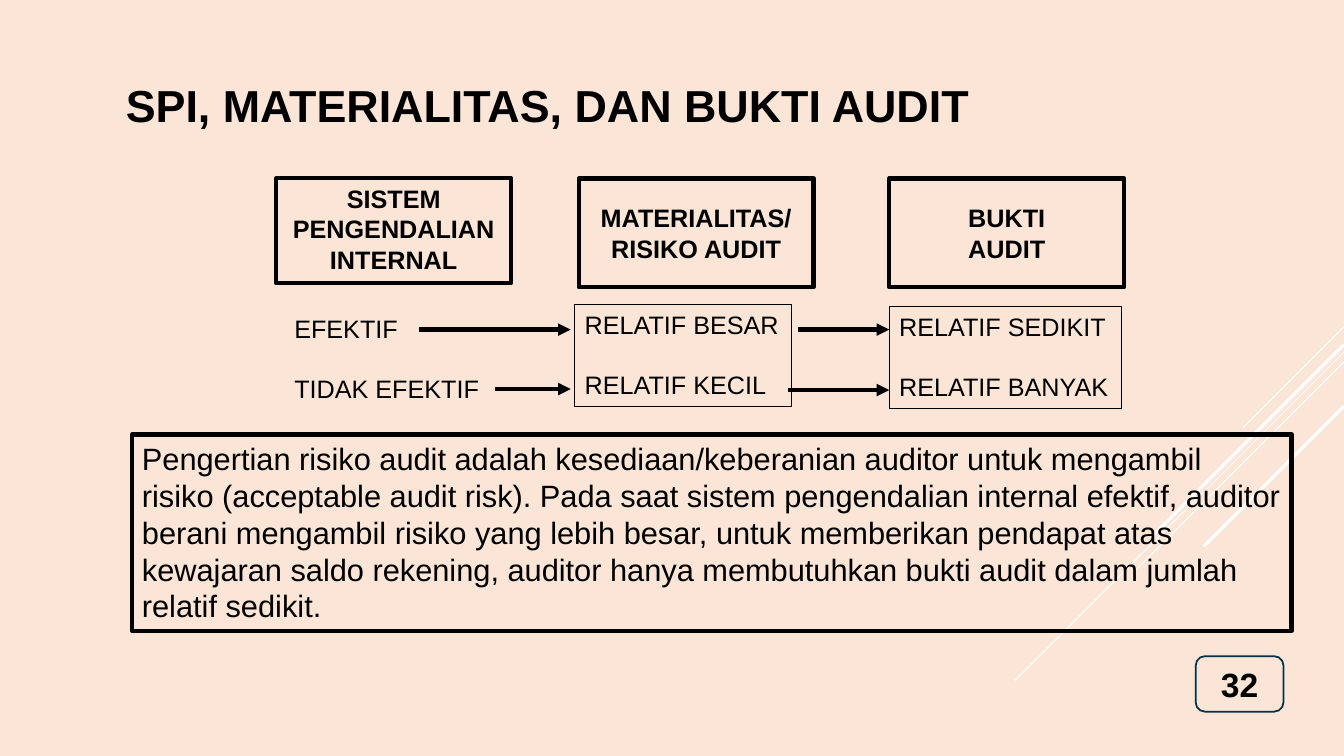
from lxml.etree import SubElement
from pptx import Presentation
from pptx.dml.color import RGBColor
from pptx.enum.shapes import MSO_CONNECTOR, MSO_SHAPE
from pptx.enum.text import MSO_ANCHOR, PP_ALIGN
from pptx.oxml.ns import qn
from pptx.util import Pt

PX = 9144
PEACH = RGBColor(0xFA, 0xE5, 0xD7)
BLACK = RGBColor(0, 0, 0)
WHITE = RGBColor(255, 255, 255)
NAVY = RGBColor(0x04, 0x31, 0x48)


def add_line(slide, start, end, color, weight, arrow=False):
    """Draw a straight line, with an arrowhead at its end if asked."""
    line = slide.shapes.add_connector(
        MSO_CONNECTOR.STRAIGHT, *(n * PX for n in (*start, *end)))
    line.line.color.rgb = color
    line.line.width = Pt(weight)
    properties = line._element.spPr
    if arrow:
        SubElement(line.line._get_or_add_ln(), qn("a:tailEnd"), type="triangle")
    SubElement(properties, qn("a:effectLst"))


def write(frame, paragraphs, size, bold=False, align=PP_ALIGN.LEFT,
          anchor=MSO_ANCHOR.TOP, wrap=True, gap=0):
    """Fill a text frame with evenly formatted paragraphs."""
    frame.word_wrap = wrap
    frame.vertical_anchor = anchor
    frame.text = "\n".join(paragraphs)
    for index, paragraph in enumerate(frame.paragraphs):
        paragraph.alignment = align
        paragraph.space_before = Pt(gap if index else 0)
        for run in paragraph.runs:
            run.font.name = "Arial"
            run.font.size = Pt(size)
            run.font.bold = bold
            run.font.color.rgb = BLACK


def add_box(slide, box, paragraphs, size, fill=None, border=BLACK, weight=3,
            preset=MSO_SHAPE.RECTANGLE, **style):
    """Add an outlined shape holding text."""
    shape = slide.shapes.add_shape(preset, *(n * PX for n in box))
    shape.shadow.inherit = False
    if fill is None:
        shape.fill.background()
    else:
        shape.fill.solid()
        shape.fill.fore_color.rgb = fill
    shape.line.color.rgb = border
    shape.line.width = Pt(weight)
    write(shape.text_frame, paragraphs, size, **style)


def add_label(slide, box, paragraphs, size, **style):
    """Add text without an outline."""
    label = slide.shapes.add_textbox(*(n * PX for n in box))
    write(label.text_frame, paragraphs, size, **style)


def add_rays(slide, right, top):
    """Draw the diagonal rays that run down-left from the slide's edge."""
    for drop, inset, length, weight in (
            (0, 0, 100, 0.75), (25, 0, 326, 0.75), (35, 0, 207, 0.75),
            (18, 0, 191, 2.25), (79, 0, 139, 2.25)):
        start = (right - inset, top + drop)
        end = (start[0] - length, start[1] + length)
        add_line(slide, start, end, WHITE, weight)


def add_headings(slide, top):
    """Add the three bold column headings."""
    middle = MSO_ANCHOR.MIDDLE
    for left, height, words, anchor, wrap in (
            (274, 104, ["SISTEM PENGENDALIAN INTERNAL"], MSO_ANCHOR.TOP, True),
            (574, 108, ["MATERIALITAS/", "RISIKO AUDIT"], middle, False),
            (882, 108, ["BUKTI", "AUDIT"], middle, False)):
        add_box(slide, (left, top, 233, height), words, 18, PEACH, bold=True,
                align=PP_ALIGN.CENTER, anchor=anchor, wrap=wrap)


def add_relations(slide, top):
    """Add the two rows of outcomes and the arrows that join them."""
    pair = {"wrap": False, "gap": 21.5}
    add_label(slide, (282, top + 4, 205, 101),
              ["EFEKTIF", "TIDAK EFEKTIF"], 18, **pair)
    add_box(slide, (570, top, 215, 101),
            ["RELATIF BESAR", "RELATIF KECIL"], 18, weight=0.75, **pair)
    add_box(slide, (882, top + 2, 230, 101),
            ["RELATIF SEDIKIT", "RELATIF BANYAK"], 18, weight=0.75, **pair)
    for start, end, drop in ((416, 566, 25), (491, 566, 84),
                             (791, 882, 25), (782, 882, 85)):
        add_line(slide, (start, top + drop), (end, top + drop), BLACK, 3, True)


def build():
    """Build and save the slide."""
    deck = Presentation()
    deck.slide_width, deck.slide_height = 1333 * PX, 750 * PX
    slide = deck.slides.add_slide(deck.slide_layouts[6])
    slide.background.fill.solid()
    slide.background.fill.fore_color.rgb = PEACH
    add_rays(slide, 1333, 324)
    add_box(slide, (1186, 651, 87, 55), ["32"], 24, PEACH, NAVY, 1.25,
            MSO_SHAPE.ROUNDED_RECTANGLE, bold=True, align=PP_ALIGN.CENTER,
            anchor=MSO_ANCHOR.MIDDLE)
    add_label(slide, (115, 68, 933, 71), ["SPI, MATERIALITAS, DAN BUKTI AUDIT"],
              32, bold=True, anchor=MSO_ANCHOR.MIDDLE)
    add_headings(slide, 177)
    add_relations(slide, 302)
    add_box(slide, (131, 431, 1150, 195), [
        "Pengertian risiko audit adalah kesediaan/keberanian auditor untuk "
        "mengambil risiko (acceptable audit risk). Pada saat sistem "
        "pengendalian internal efektif, auditor berani mengambil risiko yang "
        "lebih besar, untuk memberikan pendapat atas kewajaran saldo rekening, "
        "auditor hanya membutuhkan bukti audit dalam jumlah relatif sedikit."],
        22)
    deck.save("out.pptx")


if __name__ == "__main__":
    build()
